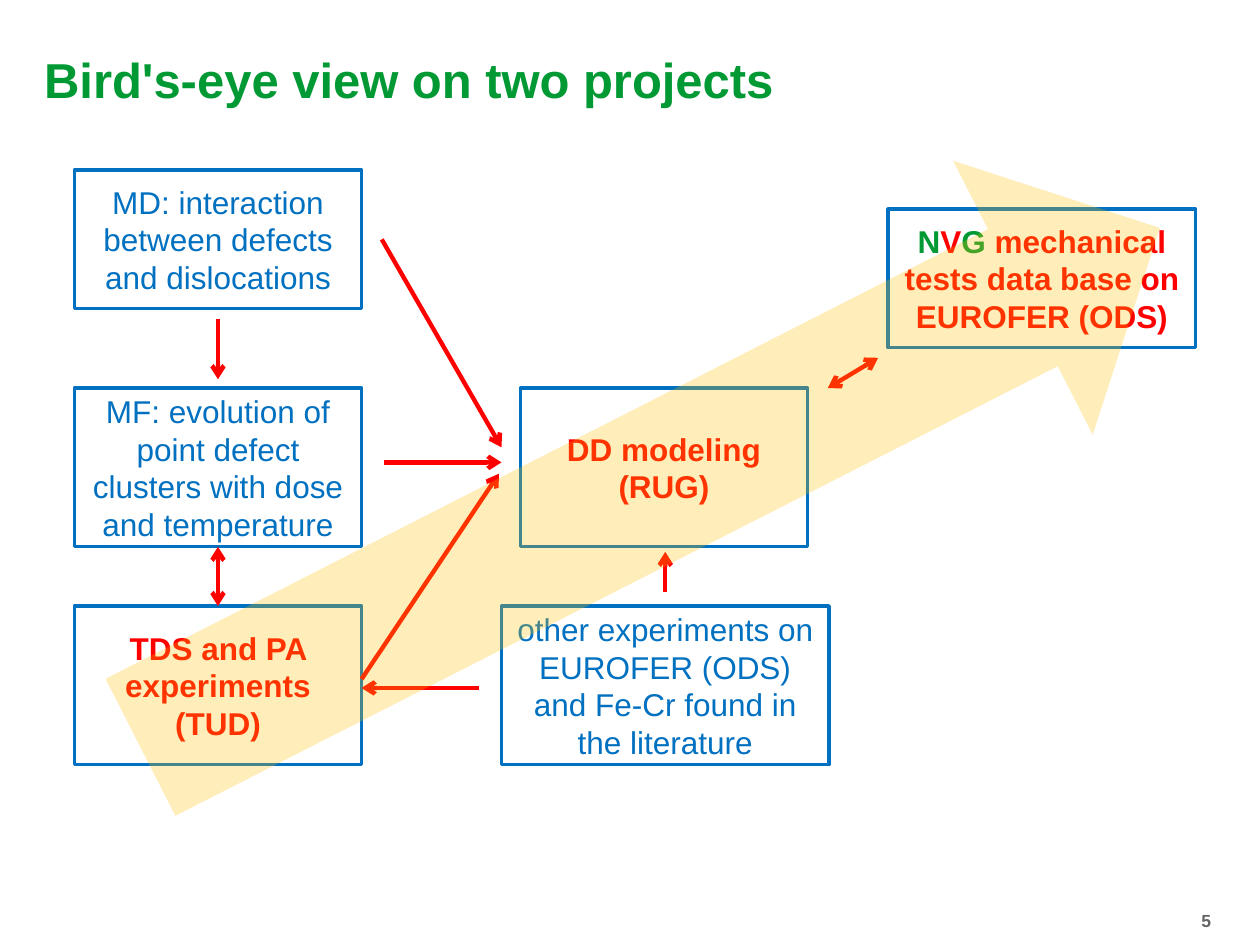
from lxml import etree
from pptx import Presentation
from pptx.dml.color import RGBColor
from pptx.enum.shapes import MSO_CONNECTOR, MSO_SHAPE
from pptx.enum.text import MSO_ANCHOR, PP_ALIGN
from pptx.oxml.ns import qn
from pptx.util import Inches, Pt

STRAIGHT = MSO_CONNECTOR.STRAIGHT
RECTANGLE, RIGHT_ARROW = MSO_SHAPE.RECTANGLE, MSO_SHAPE.RIGHT_ARROW
TOP, MIDDLE = MSO_ANCHOR.TOP, MSO_ANCHOR.MIDDLE
LEFT, CENTER, RIGHT = PP_ALIGN.LEFT, PP_ALIGN.CENTER, PP_ALIGN.RIGHT

THEME = {
    "font": "Arial",
    "green": RGBColor(0x00, 0x99, 0x33),
    "blue": RGBColor(0x00, 0x70, 0xC0),
    "red": RGBColor(0xFF, 0x00, 0x00),
    "amber": RGBColor(0xFF, 0xC0, 0x00),
    "grey": RGBColor(0x66, 0x64, 0x65),
    "title_size": Pt(28),
    "box_size": Pt(18),
    "number_size": Pt(10),
    "box_line": Pt(2),
    "arrow_line": Pt(2.5),
}


def write(frame, paragraphs, size, bold, align, anchor):
    """Fill a text frame; each paragraph is a list of (text, colour name) runs."""
    frame.word_wrap = True
    frame.vertical_anchor = anchor
    for index, runs in enumerate(paragraphs):
        paragraph = frame.paragraphs[0] if index == 0 else frame.add_paragraph()
        paragraph.alignment = align
        for text, color in runs:
            run = paragraph.add_run()
            run.text = text
            run.font.color.rgb = THEME[color]
            for name, value in {"name": THEME["font"], "size": THEME[size], "bold": bold}.items():
                setattr(run.font, name, value)


prs = Presentation()
prs.slide_width, prs.slide_height = Inches(10), Inches(7.5)
slide = prs.slides.add_slide(prs.slide_layouts[5])
shapes = slide.shapes

title = shapes.title
title_place = {"left": 0.25, "top": 0.29, "width": 8.27, "height": 0.75}
for side, value in title_place.items():
    setattr(title, side, Inches(value))
title.text_frame.margin_top = Inches(0.1)
write(title.text_frame, [[("Bird's-eye view on two projects", "green")]],
      "title_size", True, LEFT, TOP)

page_number = shapes.add_textbox(Inches(8.54), Inches(7.17), Inches(1.17), Inches(0.33))
write(page_number.text_frame, [[("5", "grey")]], "number_size", True, RIGHT, TOP)

# Shared edges of the box grid
left_column, box_width = 0.59, 2.28
middle_row, bottom_row, box_height, low_height = 3.08, 4.81, 1.26, 1.1

# left, top, width, height, bold, paragraphs
boxes = [
    (7.05, 1.66, 2.44, low_height, True,
     [[("N", "green"), ("V", "red"), ("G", "green"),
       (" mechanical tests data base on EUROFER (ODS)", "red")]]),
    (4.13, middle_row, box_width, box_height, True, [[("DD modeling (RUG)", "red")]]),
    (left_column, 1.35, box_width, low_height, False,
     [[("MD: interaction between defects and dislocations", "blue")]]),
    (left_column, middle_row, box_width, box_height, False,
     [[("MF: evolution of point defect clusters with dose and temperature", "blue")]]),
    (left_column, bottom_row, box_width, box_height, True,
     [[("TDS and PA experiments", "red")], [("(TUD)", "red")]]),
    (3.98, bottom_row, 2.6, box_height, False,
     [[("other experiments on EUROFER (ODS) and Fe-Cr found in the literature", "blue")]]),
]
for left, top, width, height, bold, paragraphs in boxes:
    box = shapes.add_shape(RECTANGLE, Inches(left), Inches(top), Inches(width), Inches(height))
    box.shadow.inherit = False
    box.fill.background()
    box.line.color.rgb = THEME["blue"]
    box.line.width = THEME["box_line"]
    write(box.text_frame, paragraphs, "box_size", bold, CENTER, MIDDLE)

# start x, start y, end x, end y, ends that carry an arrowhead
left_center = left_column + box_width / 2
left_edge = left_column + box_width
both, end_only = ("headEnd", "tailEnd"), ("tailEnd",)
links = [
    (6.57, 3.08, 6.97, 2.84, both),
    (3.03, 1.9, 3.98, 3.55, end_only),
    (3.05, 3.67, 3.98, 3.67, end_only),
    (left_edge, 5.39, 3.96, 3.76, end_only),
    (left_center, bottom_row, left_center, middle_row + box_height, both),
    (5.28, 4.7, 5.28, 4.38, end_only),
    (3.8, 5.46, left_edge, 5.46, end_only),
    (left_center, 2.53, left_center, 3.01, end_only),
]
for x1, y1, x2, y2, arrow_ends in links:
    link = shapes.add_connector(STRAIGHT, Inches(x1), Inches(y1), Inches(x2), Inches(y2))
    link.line.color.rgb = THEME["red"]
    link.line.width = THEME["arrow_line"]
    for arrow_end in arrow_ends:
        etree.SubElement(link.line._get_or_add_ln(), qn("a:" + arrow_end), type="arrow")
    etree.SubElement(link._element.spPr, qn("a:effectLst"))

overall_direction = shapes.add_shape(
    RIGHT_ARROW, Inches(0.62), Inches(2.65), Inches(9.08), Inches(2.44))
overall_direction.rotation = 333
overall_direction.shadow.inherit = False
overall_direction.line.fill.background()
overall_direction.fill.solid()
overall_direction.fill.fore_color.rgb = THEME["amber"]
amber_fill = overall_direction._element.spPr.find(qn("a:solidFill"))
etree.SubElement(amber_fill[0], qn("a:alpha"), val="27000")

prs.save("out.pptx")
